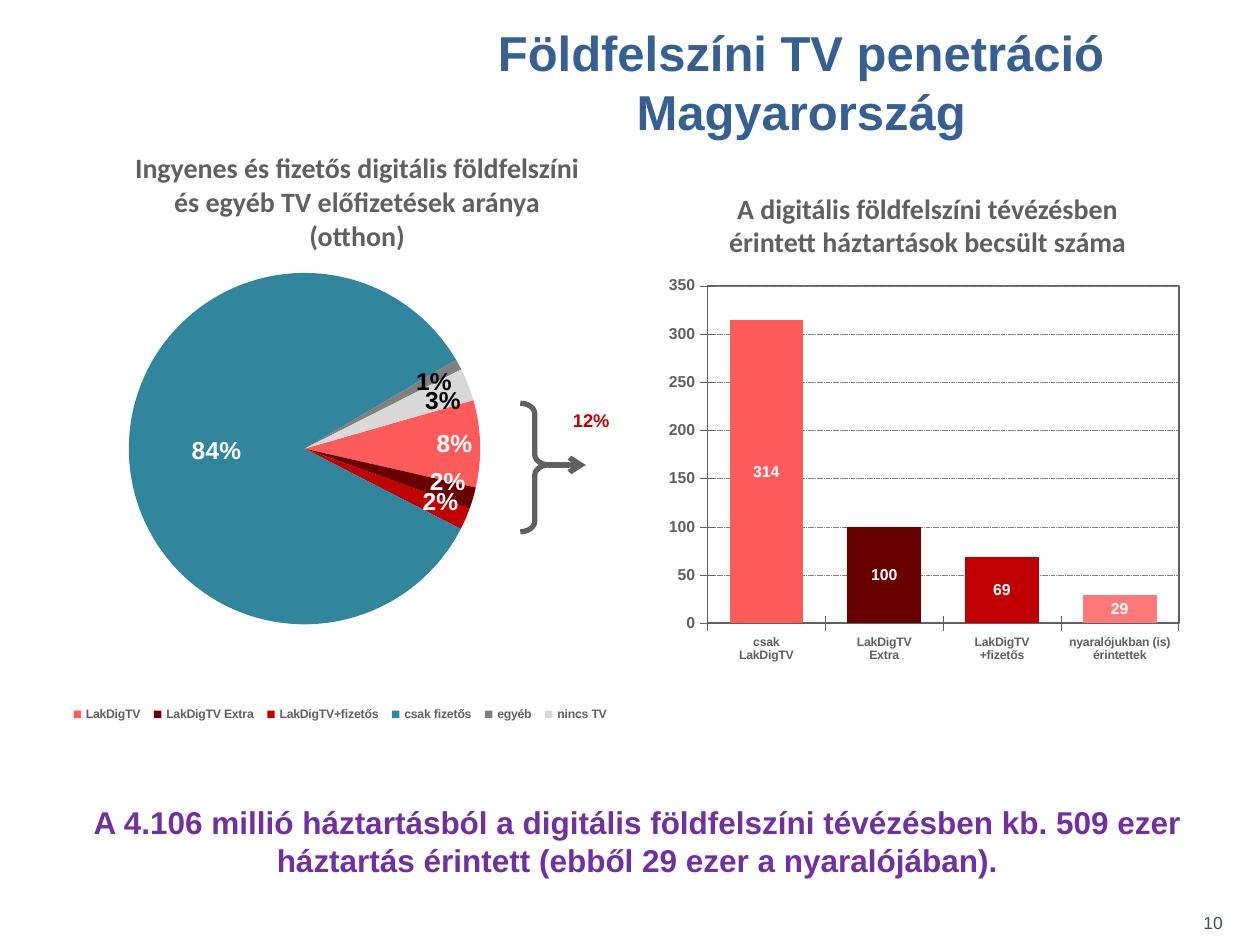
from lxml import etree
from pptx import Presentation
from pptx.chart.data import CategoryChartData
from pptx.dml.color import RGBColor
from pptx.enum import chart as ch, dml, shapes, text
from pptx.oxml import parse_xml
from pptx.oxml.ns import nsdecls, qn
from pptx.util import Cm, Pt

GREY, RED, DARK_RED, CORAL = "606060", "C00000", "680000", "FF5B5B"
WHITE, BLACK = "FFFFFF", "000000"


def colour(value):
    return RGBColor.from_string(value)


def style_font(font, size, value, bold=True, name="Arial"):
    font.name, font.size, font.bold = name, Pt(size), bold
    font.color.rgb = colour(value)


def style_line(line, value, width):
    line.color.rgb = colour(value)
    line.width = Pt(width)


def fill_text(frame, wording, size=18, value=BLACK, bold=True, name="Arial",
              align=text.PP_ALIGN.CENTER, anchor=text.MSO_ANCHOR.TOP):
    frame.text = wording
    frame.word_wrap = True
    frame.auto_size = text.MSO_AUTO_SIZE.NONE
    frame.vertical_anchor = anchor
    for paragraph in frame.paragraphs:
        paragraph.alignment = align
        style_font(paragraph.font, size, value, bold, name)


def add_text(slide, box, wording, **style):
    frame = slide.shapes.add_textbox(*map(Cm, box)).text_frame
    fill_text(frame, wording, **style)


def set_layout(parent, index, percents, inner=False):
    """Fix a chart part at left, top, width, height in percent of the chart."""
    for old in parent.findall(qn("c:layout")):
        parent.remove(old)
    target = '<c:layoutTarget val="inner"/>' if inner else ""
    modes = '<c:xMode val="edge"/><c:yMode val="edge"/>'
    sizes = "".join(f'<c:{key} val="{percent / 100:.3f}"/>'
                    for key, percent in zip("xywh", percents))
    parent.insert(index, parse_xml(
        f'<c:layout {nsdecls("c")}><c:manualLayout>{target}{modes}{sizes}'
        '</c:manualLayout></c:layout>'))


def add_chart(slide, box, kind, values, plot_percents):
    data = CategoryChartData(number_format="0")
    data.categories = list(values)
    data.add_series("Háztartások", list(values.values()))
    chart = slide.shapes.add_chart(kind, *map(Cm, box), data).chart
    chart.has_title = False
    style_font(chart.font, 9, BLACK)
    set_layout(chart.element.xpath(".//c:plotArea")[0], 0, plot_percents, inner=True)
    return chart


def paint_points(series, fills):
    for index, fill in enumerate(fills):
        point_fill = series.points[index].format.fill
        point_fill.solid()
        point_fill.fore_color.rgb = colour(fill)


def add_caption(slide, box, wording):
    add_text(slide, box, wording, size=16, value=GREY, name="Calibri")


def share_panel(slide, left, top):
    """Pie of subscription shares with its caption and legend."""
    add_caption(slide, (left + 2.3, top, 9.8, 2.3),
                "Ingyenes és fizetős digitális földfelszíni és egyéb TV "
                "előfizetések aránya (otthon)")
    shares = {"LakDigTV": 8, "LakDigTV Extra": 2, "LakDigTV+fizetős": 2,
              "csak fizetős": 84, "egyéb": 1, "nincs TV": 3}
    chart = add_chart(slide, (left, top + 2.41, 12.7, 10.8), ch.XL_CHART_TYPE.PIE,
                      shares, (10.5, 1.6, 75.7, 65.6))
    plot = chart.plots[0]
    pie = plot.series[0]
    paint_points(pie, (CORAL, DARK_RED, RED, "31859C", "808080", "D9D9D9"))

    plot.has_data_labels = True
    labels = plot.data_labels
    labels.show_percentage, labels.show_value = True, False
    labels.number_format, labels.number_format_is_linked = "0%", False
    label_place = ch.XL_LABEL_POSITION
    labels.position = label_place.INSIDE_END
    style_font(labels.font, 14, BLACK)
    for index, share in enumerate(shares.values()):
        label = pie.points[index].data_label
        style_font(label.font, 14, BLACK if index > 3 else WHITE)
        label.position = label_place.CENTER if share > 50 else label_place.INSIDE_END
    for label in chart.element.xpath(".//c:dLbl"):
        label.find(qn("c:showVal")).set("val", "0")
        label.find(qn("c:showPercent")).set("val", "1")
    pie_group = chart.element.xpath(".//c:pieChart")[0]
    etree.SubElement(pie_group, qn("c:firstSliceAng"), val="74")

    chart.has_legend = True
    chart.legend.position = ch.XL_LEGEND_POSITION.BOTTOM
    chart.legend.include_in_layout = False
    style_font(chart.legend.font, 7, GREY)
    set_layout(chart.element.xpath(".//c:legend")[0], 1, (10, 81, 88, 6))


def household_panel(slide, left, top):
    """Columns of household numbers with their caption."""
    add_caption(slide, (left + 1.2, top, 9.6, 1.6),
                "A digitális földfelszíni tévézésben érintett háztartások becsült száma")
    households = {"csak\nLakDigTV": 314, "LakDigTV\nExtra": 100,
                  "LakDigTV\n+fizetős": 69, "nyaralójukban (is) érintettek": 29}
    chart = add_chart(slide, (left, top + 1.6, 12.7, 9),
                      ch.XL_CHART_TYPE.COLUMN_STACKED, households,
                      (12.3, 4.8, 74.8, 75.6))
    chart.has_legend = False
    plot = chart.plots[0]
    plot.gap_width, plot.overlap, plot.vary_by_categories = 60, 100, False
    paint_points(plot.series[0], (CORAL, DARK_RED, RED, "FF7979"))
    plot.has_data_labels = True
    plot.data_labels.show_value = True
    style_font(plot.data_labels.font, 9, WHITE)

    for axis, size in ((chart.category_axis, 7), (chart.value_axis, 9)):
        axis.major_tick_mark = ch.XL_TICK_MARK.CROSS
        style_font(axis.tick_labels.font, size, GREY)
        style_line(axis.format.line, GREY, 0.25)
    scale = chart.value_axis
    scale.minimum_scale, scale.maximum_scale, scale.major_unit = 0, 350, 50
    scale.has_major_gridlines = True
    grid = scale.major_gridlines.format.line
    style_line(grid, "7F7F7F", 0.25)
    grid.dash_style = dml.MSO_LINE.SQUARE_DOT
    chart.element.xpath(".//c:plotArea")[0].append(parse_xml(
        f'<c:spPr {nsdecls("c", "a")}><a:noFill/><a:ln w="12700"><a:solidFill>'
        f'<a:srgbClr val="{GREY}"/></a:solidFill></a:ln></c:spPr>'))


def total_mark(slide, left, top):
    """Brace over the terrestrial slices, with an arrow to their total."""
    mark = slide.shapes.add_group_shape().shapes
    width, height, tip = 0.58, 2.59, 0.48
    brace = mark.add_shape(shapes.MSO_SHAPE.RIGHT_BRACE,
                           *map(Cm, (left, top, width, height)))
    brace.adjustments[0], brace.adjustments[1] = 0.36, tip
    brace.shadow.inherit = False
    brace.fill.background()
    style_line(brace.line, GREY, 3)

    start, level = left + width, top + tip * height
    arrow = mark.add_connector(shapes.MSO_CONNECTOR.STRAIGHT,
                               *map(Cm, (start, level, start + 0.74, level)))
    style_line(arrow.line, GREY, 3)
    outline = arrow.element.spPr.find(qn("a:ln"))
    etree.SubElement(outline, qn("a:tailEnd"), type="arrow")
    etree.SubElement(arrow.element.spPr, qn("a:effectLst"))
    add_text(slide, (left + 0.81, top, 1.4, 1), "12%", size=10.5, value=RED,
             align=text.PP_ALIGN.LEFT)


def place_title(slide, box):
    title = slide.shapes.title
    title.left, title.top, title.width, title.height = map(Cm, box)
    fill_text(title.text_frame, "Földfelszíni TV penetráció\nMagyarország",
              size=28, value="376092")
    for paragraph in title.text_frame.paragraphs:
        paragraph.space_before = Pt(0)


def main():
    deck = Presentation()
    deck.slide_width, deck.slide_height = Cm(25.4), Cm(19.05)
    slide = deck.slides.add_slide(deck.slide_layouts[5])
    place_title(slide, (7.7, 0.33, 16.9, 2.6))
    share_panel(slide, 0, 2.92)
    household_panel(slide, 12.7, 3.73)
    total_mark(slide, 10.49, 8.13)
    add_text(slide, (1.1, 16.05, 23.5, 1.8),
             "A 4.106 millió háztartásból a digitális földfelszíni tévézésben kb. "
             "509 ezer háztartás érintett (ebből 29 ezer a nyaralójában).",
             value="7030A0", anchor=text.MSO_ANCHOR.MIDDLE)
    add_text(slide, (23.7, 18.26, 1.2, 0.75), "10", size=10, value="43515A",
             bold=False, align=text.PP_ALIGN.RIGHT)
    deck.save("out.pptx")


if __name__ == "__main__":
    main()
